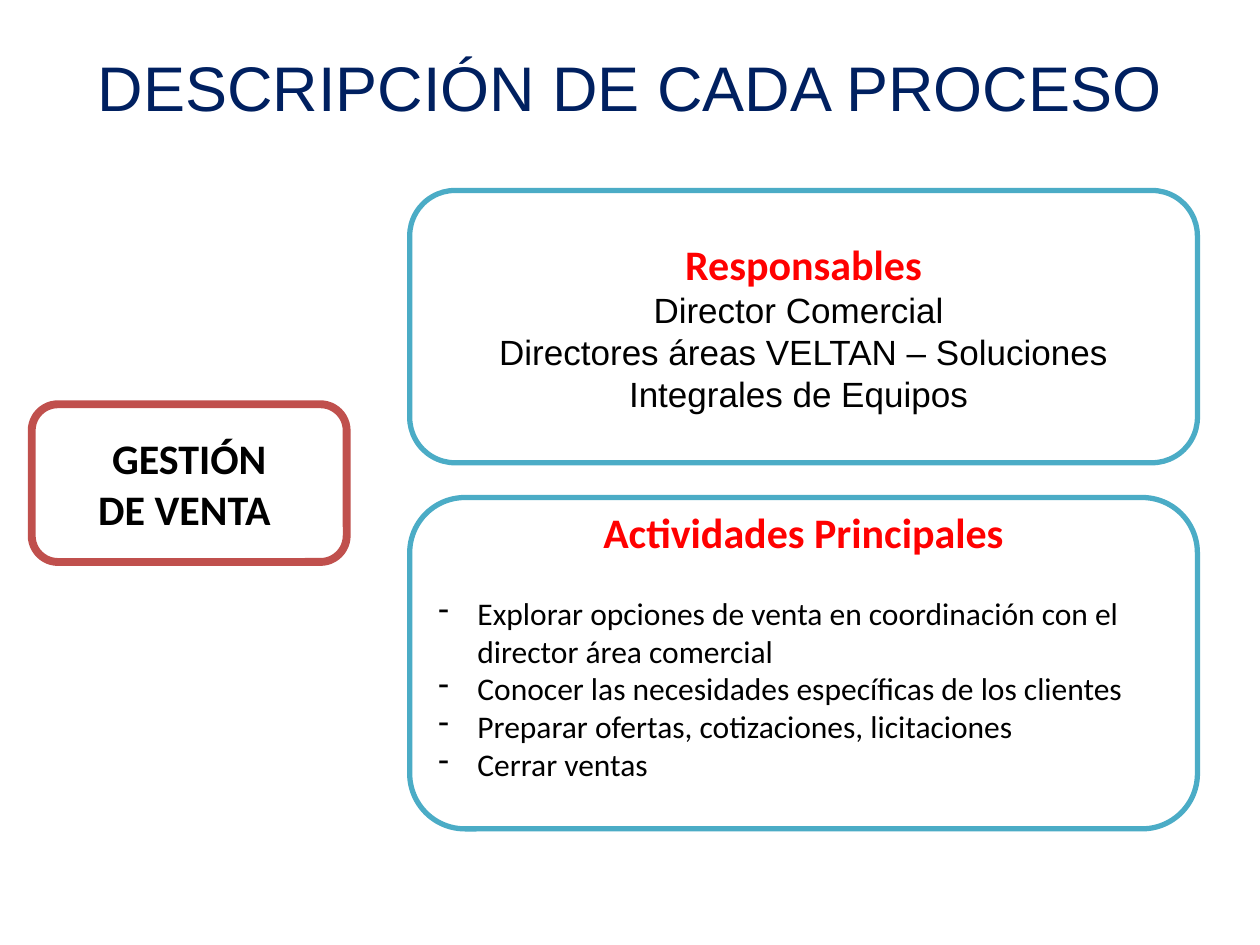
from dataclasses import dataclass

from lxml import etree
from pptx import Presentation
from pptx import util as u
from pptx.dml.color import RGBColor
from pptx.enum import shapes, text
from pptx.oxml.ns import qn

COLORS = {
    "navy": "002060",
    "red": "FF0000",
    "black": "000000",
    "white": "FFFFFF",
    "brick": "C0504D",
    "teal": "4BACC6",
}


@dataclass(frozen=True)
class Style:
    size: float
    name: str
    color: str
    bold: bool = False


@dataclass(frozen=True)
class Line:
    text: str
    style: Style
    bullet: bool = False
    space_after: float = 0


@dataclass(frozen=True)
class Box:
    left: float
    top: float
    width: float
    height: float
    lines: tuple[Line, ...]
    border: str = ""
    border_width: float = 3
    anchor: text.MSO_ANCHOR = text.MSO_ANCHOR.MIDDLE
    margin_top: float = 0.13
    margin_bottom: float = 0.13


TITLE = Style(36, "Arial", "navy")
HEADING = Style(24, "Calibri", "red", True)
PROCESS = Style(24, "Calibri", "black", True)
ROLE = Style(20, "Arial", "black")
ACTIVITY = Style(18, "Calibri", "black")

ROLES = (
    "Director Comercial ",
    "Directores áreas VELTAN – Soluciones Integrales de Equipos ",
)
ACTIVITIES = (
    "Explorar opciones de venta en coordinación con el director área comercial",
    "Conocer las necesidades específicas de los clientes",
    "Preparar ofertas, cotizaciones, licitaciones",
    "Cerrar ventas",
)
BOXES = (
    Box(1.27, 0.76, 22.86, 1.98, (Line("DESCRIPCIÓN DE CADA PROCESO", TITLE),)),
    Box(0.64, 8.15, 6.35, 3.18,
        (Line("GESTIÓN", PROCESS), Line("DE VENTA ", PROCESS)),
        border="brick", border_width=4.5),
    Box(8.26, 3.84, 15.88, 5.49,
        (Line("Responsables", HEADING), *(Line(t, ROLE) for t in ROLES)),
        border="teal"),
    Box(8.26, 10.03, 15.88, 6.68,
        (Line("Actividades Principales", HEADING, space_after=21),
         *(Line(t, ACTIVITY, bullet=True) for t in ACTIVITIES)),
        border="teal", anchor=text.MSO_ANCHOR.BOTTOM,
        margin_top=0, margin_bottom=0.6),
)


def rgb(key: str) -> RGBColor:
    return RGBColor.from_string(COLORS[key])


def add_dash(p) -> None:
    """Give the paragraph a hanging dash bullet."""
    pPr = p._p.get_or_add_pPr()
    pPr.set("marL", str(u.Cm(0.79)))
    pPr.set("indent", str(-u.Cm(0.79)))
    etree.SubElement(pPr, qn("a:buChar"), char="-")


def write_line(p, line: Line) -> None:
    p.alignment = text.PP_ALIGN.LEFT if line.bullet else text.PP_ALIGN.CENTER
    p.space_after = u.Pt(line.space_after)
    if line.bullet:
        add_dash(p)
    r = p.add_run()
    r.text = line.text
    style = line.style
    formats = {"size": u.Pt(style.size), "name": style.name, "bold": style.bold}
    for key, value in formats.items():
        setattr(r.font, key, value)
    r.font.color.rgb = rgb(style.color)


def draw_box(s, box: Box) -> None:
    """Draw a rounded frame, or a plain text box when there is no border."""
    area = [u.Cm(n) for n in (box.left, box.top, box.width, box.height)]
    if box.border:
        sp = s.shapes.add_shape(shapes.MSO_SHAPE.ROUNDED_RECTANGLE, *area)
        sp.shadow.inherit = False
        sp.fill.solid()
        sp.fill.fore_color.rgb = rgb("white")
        sp.line.color.rgb = rgb(box.border)
        sp.line.width = u.Pt(box.border_width)
    else:
        sp = s.shapes.add_textbox(*area)
    tf = sp.text_frame
    formats = {
        "word_wrap": True,
        "vertical_anchor": box.anchor,
        "margin_top": u.Cm(box.margin_top),
        "margin_bottom": u.Cm(box.margin_bottom),
    }
    for key, value in formats.items():
        setattr(tf, key, value)
    for i, line in enumerate(box.lines):
        write_line(tf.add_paragraph() if i else tf.paragraphs[0], line)


def main() -> None:
    prs = Presentation()
    prs.slide_width, prs.slide_height = u.Cm(25.4), u.Cm(19.05)
    s = prs.slides.add_slide(prs.slide_layouts[6])
    for box in BOXES:
        draw_box(s, box)
    prs.save("out.pptx")


if __name__ == "__main__":
    main()
